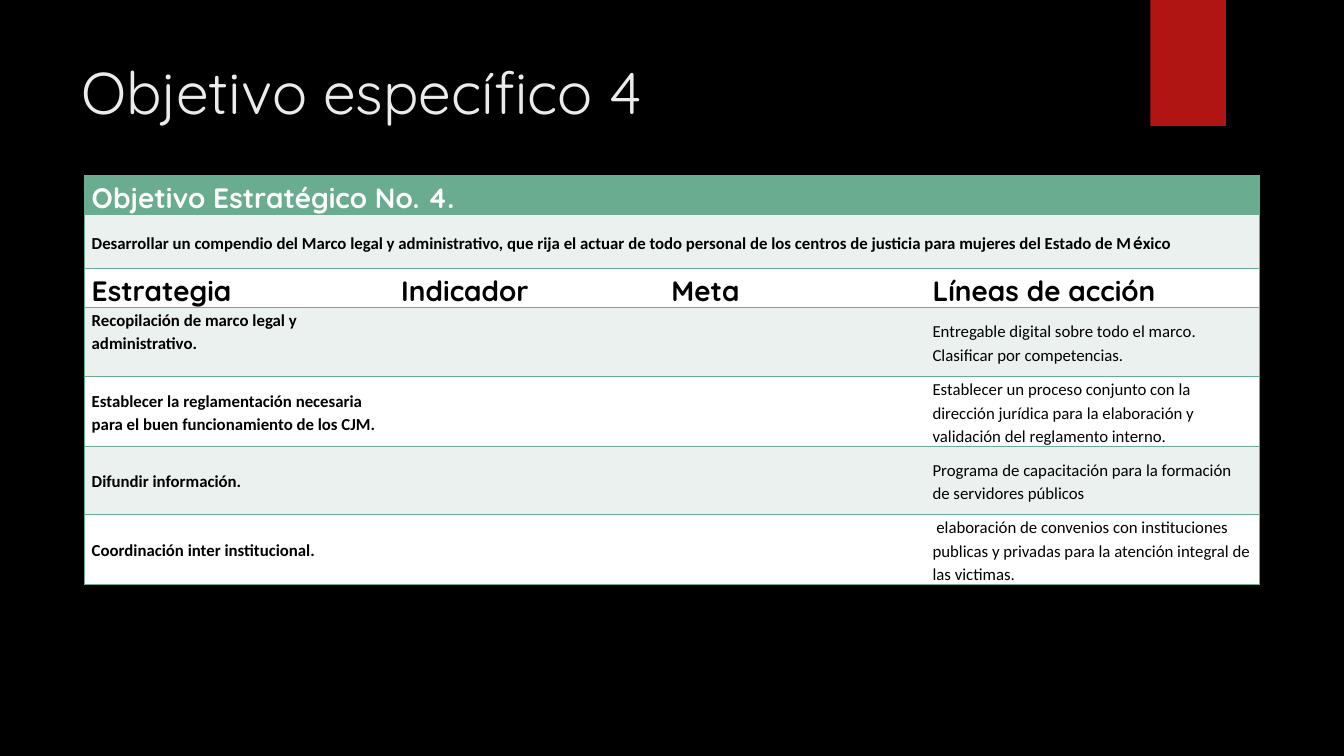
from lxml import etree
from pptx import Presentation
from pptx.dml.color import RGBColor
from pptx.enum.shapes import MSO_SHAPE
from pptx.enum.text import MSO_ANCHOR, PP_ALIGN
from pptx.oxml.ns import qn
from pptx.util import Inches, Pt

RECTANGLE = MSO_SHAPE.RECTANGLE
TOP, MIDDLE = MSO_ANCHOR.TOP, MSO_ANCHOR.MIDDLE
LEFT, JUSTIFY = PP_ALIGN.LEFT, PP_ALIGN.JUSTIFY

BLACK = RGBColor(0x00, 0x00, 0x00)
WHITE = RGBColor(0xFF, 0xFF, 0xFF)
TITLE_GREY = RGBColor(0xEB, 0xEB, 0xEB)
RED = RGBColor(0xB0, 0x15, 0x13)
GREEN = RGBColor(0x6A, 0xAC, 0x90)
PALE_GREEN = RGBColor(0xEB, 0xF1, 0xEE)

SLIDE_WIDTH, SLIDE_HEIGHT = Inches(13.33), Inches(7.5)
COLUMN_WIDTHS = [3.07, 2.68, 2.59, 3.31]
ROW_HEIGHTS = [0.22, 0.54, 0.22, 0.68, 0.68, 0.68, 0.45]
PLAIN_TABLE_STYLE = "{2D5ABB26-0587-4C30-8999-92F81FD0307C}"

TITLE = {"name": "Quicksand", "size": Pt(42), "bold": False}
HEADING = {"name": "Quicksand", "size": Pt(20), "bold": True}
STRATEGY = {"name": "Calibri", "size": Pt(12), "bold": True}
ACCENTED = {**STRATEGY, "name": "Quicksand"}
ACTION = {**STRATEGY, "bold": False}

OBJECTIVE = [
    ("Desarrollar un compendio del Marco legal y administrativo, que rija el actuar "
     "de todo personal de los centros de justicia para mujeres del Estado de M", STRATEGY),
    ("é", ACCENTED),
    ("xico", STRATEGY),
]
HEADINGS = ["Estrategia", "Indicador", "Meta", "Líneas de acción"]
STRATEGIES = [
    ("Recopilación de marco legal y administrativo.",
     ["Entregable digital sobre todo el marco.", "Clasificar por competencias."]),
    ("Establecer la reglamentación necesaria para el buen funcionamiento de los CJM.",
     ["Establecer un proceso conjunto con la dirección jurídica para la elaboración "
      "y validación del reglamento interno."]),
    ("Difundir información.",
     ["Programa de capacitación para la formación de servidores públicos"]),
    ("Coordinación inter institucional.",
     [" elaboración de convenios con instituciones publicas y privadas "
      "para la atención integral de las victimas."]),
]


def add_run(paragraph, text, font_format, color):
    run = paragraph.add_run()
    run.text = text
    for attribute, value in font_format.items():
        setattr(run.font, attribute, value)
    run.font.color.rgb = color


def add_title(slide, text):
    shape = slide.shapes.add_textbox(
        Inches(0.71), Inches(0.5), Inches(10.29), Inches(1.1))
    shape.text_frame.word_wrap = True
    shape.text_frame.vertical_anchor = TOP
    add_run(shape.text_frame.paragraphs[0], text, TITLE, TITLE_GREY)


def add_ribbon(slide):
    shape = slide.shapes.add_shape(
        RECTANGLE, Inches(11.41), 0, Inches(0.75), SLIDE_HEIGHT // 6)
    shape.shadow.inherit = False
    shape.fill.solid()
    shape.fill.fore_color.rgb = RED
    shape.line.fill.background()


def add_border(cell, side):
    properties = cell._tc.get_or_add_tcPr()
    line = etree.SubElement(properties, qn(f"a:ln{side}"), w=str(Pt(1)))
    fill = etree.SubElement(line, qn("a:solidFill"))
    etree.SubElement(fill, qn("a:srgbClr"), val=str(GREEN))


def style_cell(cell, sides, color):
    margins = {"margin_left": 0.07, "margin_right": 0.07,
               "margin_top": 0, "margin_bottom": 0}
    for attribute, value in margins.items():
        setattr(cell, attribute, Inches(value))
    cell.vertical_anchor = MIDDLE
    for side in sides:
        add_border(cell, side)
    cell.fill.solid()
    cell.fill.fore_color.rgb = color


def write_cell(cell, paragraphs, color=BLACK, alignment=LEFT):
    for index, runs in enumerate(paragraphs):
        frame = cell.text_frame
        paragraph = frame.add_paragraph() if index else frame.paragraphs[0]
        paragraph.alignment = alignment
        paragraph.line_spacing = 1.15
        for text, font_format in runs:
            add_run(paragraph, text, font_format, color)


def add_grid(slide):
    frame = slide.shapes.add_table(
        len(ROW_HEIGHTS), len(COLUMN_WIDTHS), Inches(0.84), Inches(1.74),
        Inches(sum(COLUMN_WIDTHS)), Inches(sum(ROW_HEIGHTS)))
    table = frame.table
    table.first_row = table.horz_banding = False
    table._tbl.tblPr.find(qn("a:tableStyleId")).text = PLAIN_TABLE_STYLE
    for column, width in zip(table.columns, COLUMN_WIDTHS):
        column.width = Inches(width)
    last = len(COLUMN_WIDTHS) - 1
    for row_index, height in enumerate(ROW_HEIGHTS):
        table.rows[row_index].height = Inches(height)
        band = PALE_GREEN if row_index % 2 else WHITE
        for column_index in range(last + 1):
            edges = {0: "LTB", last: "RTB"}.get(column_index, "TB")
            style_cell(table.cell(row_index, column_index), edges,
                       band if row_index else GREEN)
    for row_index in (0, 1):
        table.cell(row_index, 0).merge(table.cell(row_index, last))
        add_border_first(table.cell(row_index, 0))
    return table


def add_border_first(cell):
    add_border(cell, "R")
    properties = cell._tc.tcPr
    properties.insert(1, properties[-1])


def fill_table(table):
    write_cell(table.cell(0, 0), [[("Objetivo Estratégico No. 4.", HEADING)]], WHITE)
    write_cell(table.cell(1, 0), [OBJECTIVE], alignment=JUSTIFY)
    for column_index, heading in enumerate(HEADINGS):
        write_cell(table.cell(2, column_index), [[(heading, HEADING)]])
    for row_index, (strategy, actions) in enumerate(STRATEGIES, start=3):
        write_cell(table.cell(row_index, 0), [[(strategy, STRATEGY)]])
        write_cell(table.cell(row_index, 3), [[(action, ACTION)] for action in actions])
    table.cell(3, 0).margin_bottom = Inches(0.23)


def main():
    presentation = Presentation()
    presentation.slide_width = SLIDE_WIDTH
    presentation.slide_height = SLIDE_HEIGHT
    slide = presentation.slides.add_slide(presentation.slide_layouts[6])
    slide.background.fill.solid()
    slide.background.fill.fore_color.rgb = BLACK
    add_ribbon(slide)
    add_title(slide, "Objetivo específico 4")
    fill_table(add_grid(slide))
    presentation.save("out.pptx")


if __name__ == "__main__":
    main()
